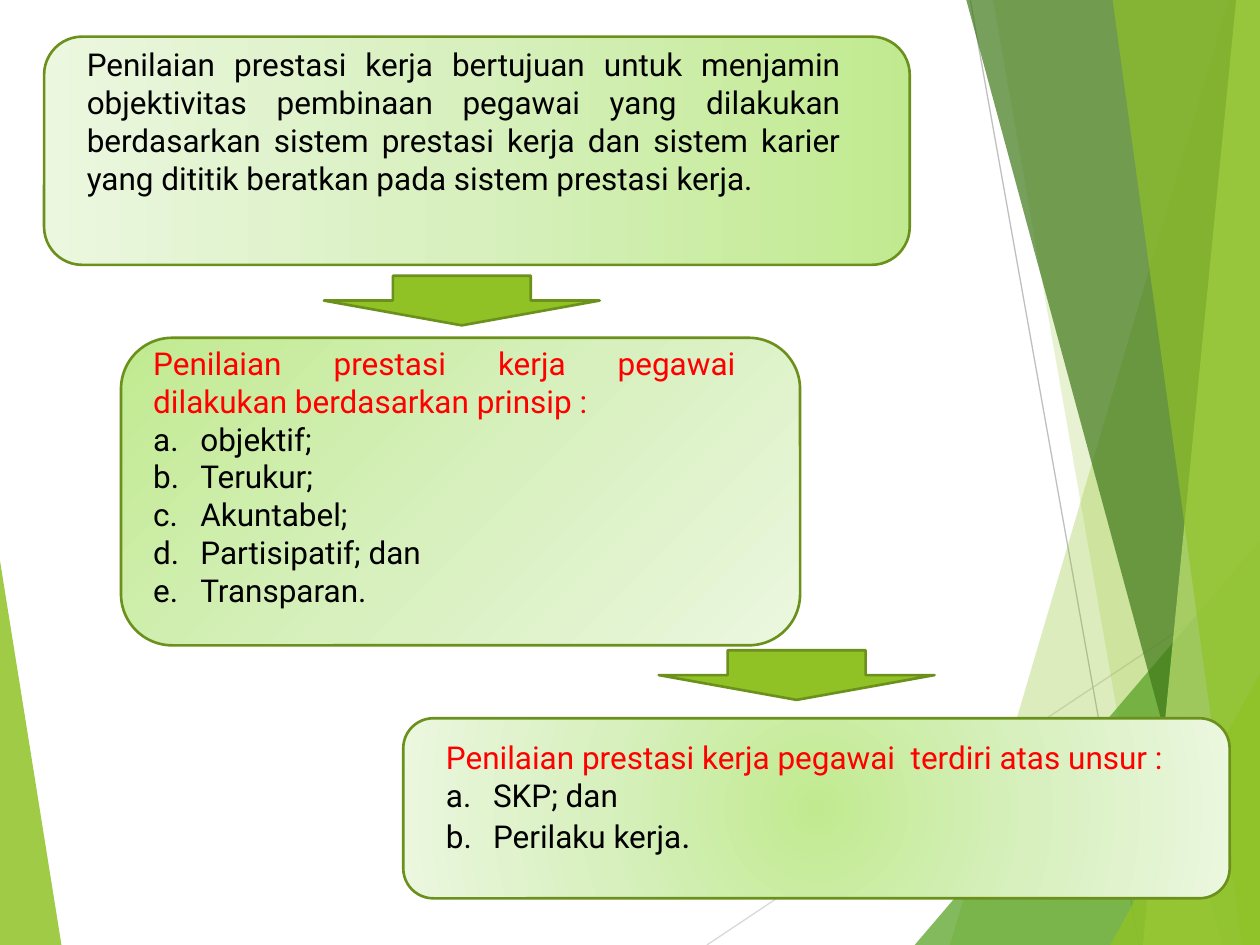
from dataclasses import dataclass

from lxml.etree import SubElement
from pptx import Presentation
from pptx.dml.color import RGBColor
from pptx.enum.shapes import MSO_CONNECTOR, MSO_SHAPE
from pptx.enum.text import MSO_ANCHOR, MSO_AUTO_SIZE, PP_ALIGN
from pptx.oxml.ns import qn
from pptx.util import Cm, Pt


@dataclass(frozen=True)
class Theme:
    font: str = "Roboto"
    body: float = 18
    stop: float = 20
    outline: float = 1.5
    hairline: float = 0.75
    text: str = "000000"
    heading: str = "FF0000"
    green: str = "90C226"
    mid_green: str = "54A021"
    dark_green: str = "3F7819"
    lime: str = "C0E474"
    edge: str = "6B901C"
    light_gray: str = "D9D9D9"
    gray: str = "BFBFBF"
    gradient: tuple = ((0, "C1EA90"), (50, "D7F0BD"), (100, "EBF7DF"))


T = Theme()
WIDTH, HEIGHT = 25.4, 19.05


def rgb(color):
    return RGBColor.from_string(color)


def add_facet(s, points, color, opacity):
    corners = [(Cm(x), Cm(y)) for x, y in points]
    builder = s.shapes.build_freeform(*corners[0])
    builder.add_line_segments(corners[1:], close=True)
    sp = builder.convert_to_shape()
    sp.shadow.inherit = False
    sp.fill.solid()
    sp.fill.fore_color.rgb = rgb(color)
    clr = next(sp.element.spPr.iter(qn("a:srgbClr")))
    SubElement(clr, qn("a:alpha"), val=str(opacity * 1000))
    sp.line.fill.background()


def add_line(s, x1, y1, x2, y2, color):
    line = s.shapes.add_connector(MSO_CONNECTOR.STRAIGHT, Cm(x1), Cm(y1), Cm(x2), Cm(y2))
    line.line.color.rgb = rgb(color)
    line.line.width = Pt(T.hairline)
    SubElement(line.element.spPr, qn("a:effectLst"))


def add_backdrop(s):
    add_facet(s, [(0, 11.3), (1.24, HEIGHT), (0, HEIGHT)], T.green, 85)
    add_line(s, 14.25, HEIGHT, WIDTH, 11.61, T.light_gray)
    add_line(s, 19.56, 0, 22.96, HEIGHT, T.gray)

    def band(top, bottom, color, opacity):
        points = [(top, 0), (bottom, HEIGHT), (WIDTH, HEIGHT), (WIDTH, 0)]
        add_facet(s, points, color, opacity)

    def corner(left, top, color, opacity):
        add_facet(s, [(left, HEIGHT), (WIDTH, top), (WIDTH, HEIGHT)], color, opacity)

    band(24.77, 19.15, T.green, 30)
    band(20.02, 23.34, T.green, 20)
    corner(18.44, 10.9, T.mid_green, 72)
    band(19.48, 24.64, T.dark_green, 70)
    band(24.92, 23.04, T.lime, 70)
    band(22.43, 25.04, T.green, 65)
    corner(22.38, 13.59, T.green, 80)


def add_outlined(s, kind, x, y, w, h):
    sp = s.shapes.add_shape(kind, Cm(x), Cm(y), Cm(w), Cm(h))
    sp.shadow.inherit = False
    sp.line.color.rgb = rgb(T.edge)
    sp.line.width = Pt(T.outline)
    return sp


def add_panel(s, x, y, w, h, focus=None):
    sp = add_outlined(s, MSO_SHAPE.ROUNDED_RECTANGLE, x, y, w, h)
    sp.fill.gradient()
    grad = sp.element.spPr.find(qn("a:gradFill"))
    for child in list(grad):
        grad.remove(child)
    stops = SubElement(grad, qn("a:gsLst"))
    for pos, color in T.gradient:
        stop = SubElement(stops, qn("a:gs"), pos=str(pos * 1000))
        SubElement(stop, qn("a:srgbClr"), val=color)
    if focus is None:
        SubElement(grad, qn("a:lin"), ang="10800000", scaled="0")
    else:
        shade = SubElement(grad, qn("a:path"), path="circle")
        near, far = str(focus * 1000), str((100 - focus) * 1000)
        SubElement(shade, qn("a:fillToRect"), l=near, t=near, r=far, b=far)


def add_arrow(s, x, y):
    sp = add_outlined(s, MSO_SHAPE.DOWN_ARROW, x, y, 5.56, 1)
    sp.fill.solid()
    sp.fill.fore_color.rgb = rgb(T.green)


def add_text_box(s, x, y, w, h):
    tf = s.shapes.add_textbox(Cm(x), Cm(y), Cm(w), Cm(h)).text_frame
    tf.word_wrap = True
    tf.auto_size = MSO_AUTO_SIZE.SHAPE_TO_FIT_TEXT
    tf.vertical_anchor = MSO_ANCHOR.TOP
    return tf


def write(p, text, *, size=T.body, color=T.text, lettered=False):
    p.alignment = PP_ALIGN.JUSTIFY
    if lettered:
        pPr = p._p.get_or_add_pPr()
        pPr.set("marL", str(Cm(0.95)))
        pPr.set("indent", str(-Cm(0.95)))
        SubElement(pPr, qn("a:buFont"), typeface=T.font)
        SubElement(pPr, qn("a:buAutoNum"), type="alphaLcPeriod")
    r = p.add_run()
    r.text = text
    r.font.name = T.font
    r.font.size = Pt(size)
    r.font.color.rgb = rgb(color)


def add_list(tf, heading, items):
    write(tf.paragraphs[0], heading, color=T.heading)
    for item in items:
        p = tf.add_paragraph()
        write(p, item, lettered=True)
    return p


def main():
    prs = Presentation()
    prs.slide_width, prs.slide_height = Cm(WIDTH), Cm(HEIGHT)
    s = prs.slides.add_slide(prs.slide_layouts[6])
    add_backdrop(s)

    add_panel(s, 0.89, 0.74, 17.45, 4.6)
    tf = add_text_box(s, 1.5, 0.79, 15.7, 3.33)
    write(tf.paragraphs[0], "Penilaian prestasi kerja bertujuan untuk menjamin objektivitas "
          "pembinaan pegawai yang dilakukan berdasarkan sistem prestasi kerja dan sistem "
          "karier yang dititik beratkan pada sistem prestasi kerja.")

    add_panel(s, 2.44, 6.81, 13.69, 6.2, focus=0)
    tf = add_text_box(s, 2.84, 6.81, 12.24, 5.64)
    add_list(tf, "Penilaian prestasi kerja pegawai dilakukan berdasarkan prinsip :",
             ["objektif;", "Terukur;", "Akuntabel;", "Partisipatif; dan", "Transparan."])

    add_panel(s, 8.13, 14.48, 16.66, 3.63, focus=50)
    tf = add_text_box(s, 8.74, 14.76, 15.34, 3.43)
    p = add_list(tf, "Penilaian prestasi kerja pegawai  terdiri atas unsur :",
                 ["SKP; dan", "Perilaku kerja"])
    write(p, ".", size=T.stop)

    add_arrow(s, 6.53, 5.56)
    add_arrow(s, 13.28, 13.11)
    prs.save("out.pptx")


if __name__ == "__main__":
    main()
